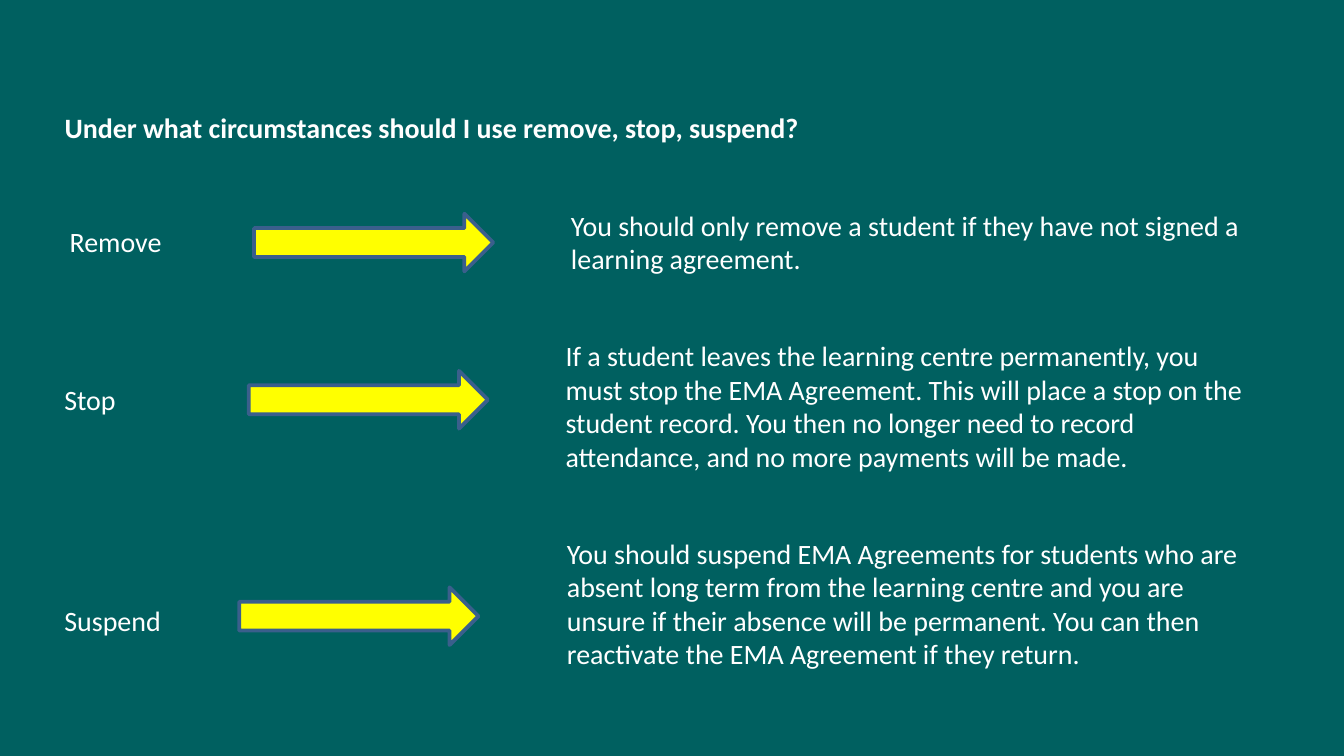
import pptx
import pptx.util
import pptx.dml.color
import pptx.enum.shapes
import pptx.enum.text

Inches = pptx.util.Inches

THEME = {
    "background": "006060",
    "text": "FFFFFF",
    "arrow": "FFFF00",
    "outline": "3A5F8C",
    "font": "Calibri",
    "size": 15,
    "outline_width": 2,
}

TITLE = "Under what circumstances should I use remove, stop, suspend?"
ACTIONS = [
    {"label": "Remove", "label_box": (0.42, 1.62, 1.47, 0.35),
     "arrow_at": (1.89, 1.59), "advice_box": (4.15, 1.5, 5.28, 0.61),
     "advice": "You should only remove a student if they have not signed a "
               "learning agreement."},
    {"label": "Stop", "label_box": (0.38, 2.8, 1.39, 0.35),
     "arrow_at": (1.85, 2.76), "advice_box": (4.11, 2.47, 5.3, 1.11),
     "advice": "If a student leaves the learning centre permanently, you must "
               "stop the EMA Agreement. This will place a stop on the student "
               "record. You then no longer need to record attendance, and no "
               "more payments will be made."},
    {"label": "Suspend", "label_box": (0.38, 4.44, 1.05, 0.43),
     "arrow_at": (1.78, 4.37), "advice_box": (4.12, 3.94, 5.3, 1.11),
     "advice": "You should suspend EMA Agreements for students who are absent "
               "long term from the learning centre and you are unsure if their "
               "absence will be permanent. You can then reactivate the EMA "
               "Agreement if they return."},
]
ARROW_SIZE = (1.78, 0.43)


def color(name):
    return pptx.dml.color.RGBColor.from_string(THEME[name])


def write(sp, text, bold=False):
    tf = sp.text_frame
    tf.word_wrap = True
    tf.auto_size = pptx.enum.text.MSO_AUTO_SIZE.NONE
    tf.vertical_anchor = pptx.enum.text.MSO_ANCHOR.TOP
    p = tf.paragraphs[0]
    p.alignment = pptx.enum.text.PP_ALIGN.LEFT
    r = p.add_run()
    r.text = text
    r.font.name = THEME["font"]
    r.font.size = pptx.util.Pt(THEME["size"])
    r.font.bold = bold
    r.font.color.rgb = color("text")


def add_text(s, text, box, **style):
    write(s.shapes.add_textbox(*map(Inches, box)), text, **style)


def add_arrow(s, at):
    sp = s.shapes.add_shape(pptx.enum.shapes.MSO_SHAPE.RIGHT_ARROW,
                            *map(Inches, at + ARROW_SIZE))
    sp.shadow.inherit = False
    sp.fill.solid()
    sp.fill.fore_color.rgb = color("arrow")
    sp.line.color.rgb = color("outline")
    sp.line.width = pptx.util.Pt(THEME["outline_width"])


def main():
    prs = pptx.Presentation()
    prs.slide_width = Inches(10)
    prs.slide_height = prs.slide_width * 9 // 16
    s = prs.slides.add_slide(prs.slide_layouts.get_by_name("Title Only"))
    s.background.fill.solid()
    s.background.fill.fore_color.rgb = color("background")

    title = s.shapes.title
    title.left, title.top = Inches(0.38), Inches(0.77)
    title.width, title.height = Inches(9.04), Inches(0.35)
    write(title, TITLE, bold=True)

    for action in ACTIONS:
        add_text(s, action["label"], action["label_box"])
        add_arrow(s, action["arrow_at"])
        add_text(s, action["advice"], action["advice_box"])

    prs.save("out.pptx")


if __name__ == "__main__":
    main()
